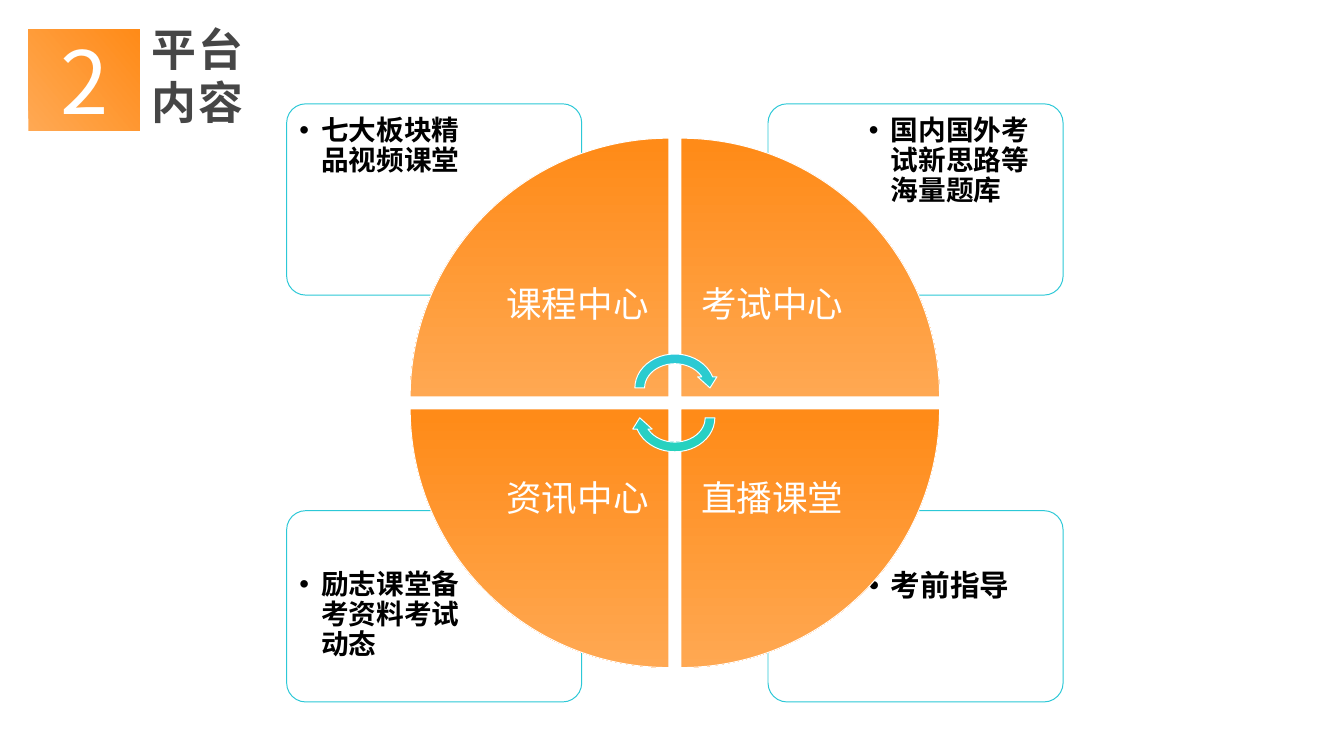
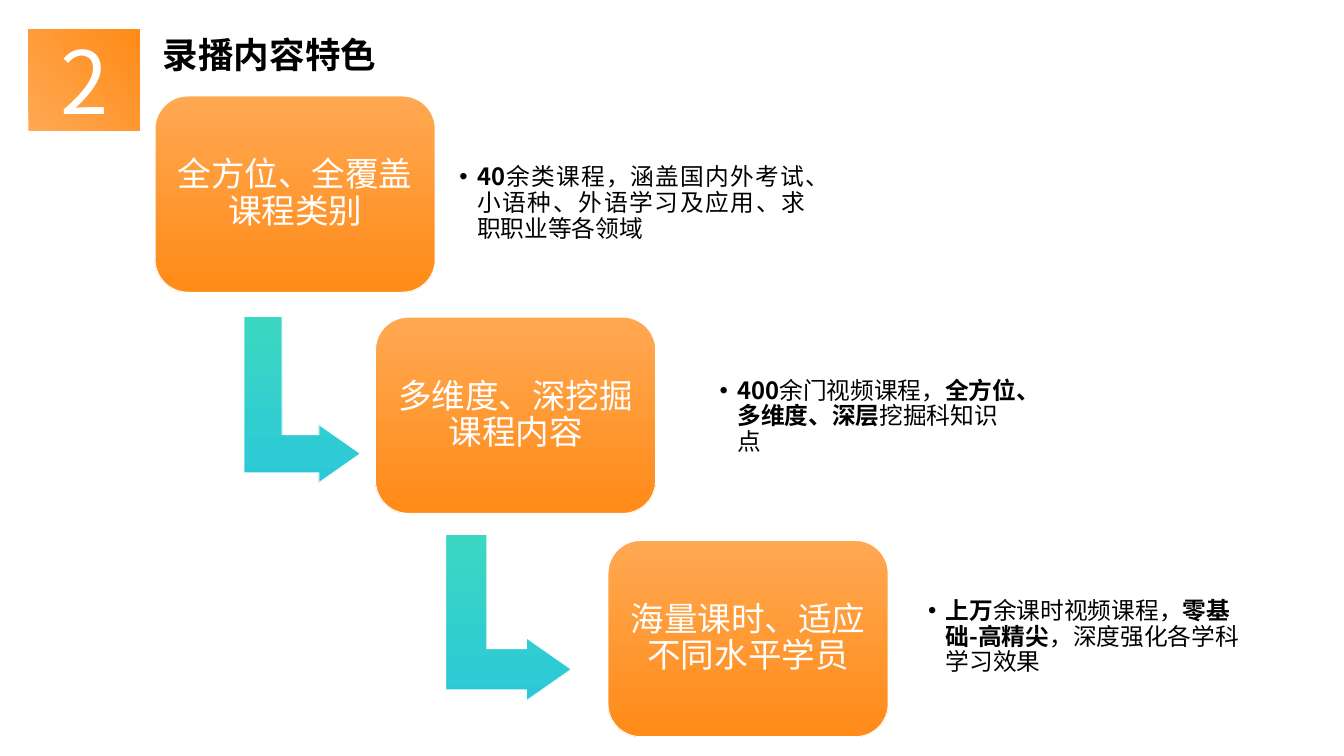
"""Build two slides on what a learning platform offers."""
from lxml.etree import SubElement
from pptx import Presentation
from pptx.dml.color import RGBColor
from pptx.enum.shapes import MSO_SHAPE as Kind
from pptx.enum.text import MSO_ANCHOR as Anchor, MSO_AUTO_SIZE as Auto, PP_ALIGN as Align
from pptx.oxml.ns import qn
from pptx.util import Pt

FACE = "Noto Sans CJK SC"
WHITE, BLACK, GREY, TEAL = "FFFFFF", "000000", "464646", "2CC8D7"
DARK, LIGHT, MINT, GREEN = "FF8B18", "FFA852", "3CD7C2", "26D3BC"
hue = RGBColor.from_string


def draw(slide, kind, box, stops, line=WHITE, turn=0, angle=270, start=0):
    """Add a shape with a gradient that keeps its direction when turned."""
    shape = slide.shapes.add_shape(kind, *map(Pt, box))
    shape.shadow.inherit = False
    shape.rotation = turn
    shape.fill.gradient()
    shape.fill.gradient_angle = angle
    for stop, color, spot in zip(shape.fill.gradient_stops, stops, (start, 1)):
        stop.color.rgb = hue(color)
        stop.position = spot
    shape.element.spPr.find(qn("a:gradFill")).set("rotWithShape", "0")
    if line:
        shape.line.color.rgb = hue(line)
        shape.line.width = Pt(1)
    else:
        shape.line.fill.background()
    return shape


def write(shape, runs, size, color, pads, align=Align.CENTER, anchor=Anchor.MIDDLE,
          lead=0.9, hang=0, track=0):
    """Fill a shape with one paragraph of (text, bold) runs."""
    frame = shape.text_frame
    frame.word_wrap = True
    frame.auto_size = Auto.NONE
    frame.vertical_anchor = anchor
    frame.margin_left = frame.margin_right = Pt(pads[0])
    frame.margin_top = frame.margin_bottom = Pt(pads[1])
    para = frame.paragraphs[0]
    para.alignment = align
    para.line_spacing = lead
    para.space_before = Pt(0)
    if hang:
        para.level = 1
        props = para._p.get_or_add_pPr()
        props.set("marL", str(Pt(hang)))
        props.set("indent", str(Pt(-hang)))
        SubElement(props, qn("a:buFont"), typeface="Arial")
        SubElement(props, qn("a:buChar"), char="•")
    for text, bold in runs:
        run = para.add_run()
        run.text = text
        font = run.font
        font.size, font.bold, font.name = Pt(size), bold, FACE
        font.color.rgb = hue(color)
        mark = run._r.get_or_add_rPr()
        SubElement(mark, qn("a:ea"), typeface=FACE)
        if track:
            mark.set("spc", str(track))


deck = Presentation()
deck.slide_width, deck.slide_height = Pt(1360.8), Pt(765.4)
layout = deck.slide_layouts.get_by_name("Comparison")

heads = [
    ("平台内容", (141.8, 15.8, 150.5, 121.7), 45.4, GREY, (11.5, 5.8), 240),
    ("录播内容特色", (157.7, 29.5, 252, 51), 36, BLACK, (7.2, 3.6), 0),
]
for text, box, size, color, pads, track in heads:
    slide = deck.slides.add_slide(layout)
    title = slide.shapes.title
    title.left, title.top, title.width, title.height = map(Pt, box)
    write(title, [(text, True)], size, color, pads, Align.LEFT, Anchor.TOP, 1, track=track)
    badge = draw(slide, Kind.RECTANGLE, (28.8, 29.5, 113, 103), (LIGHT, DARK),
                 None, angle=40, start=0.02)
    write(badge, [("2", False)], 88, WHITE, (6.5, 2.9), lead=1)
wheel, steps = deck.slides

MIDX, MIDY, GAP = 683.3, 407.9, 6
WEDGE, LABEL, CARDW, CARDH = 262, 185, 298.8, 193.7
parts = [
    (0, 0, 0, "课程中心", "七大板块精品视频课堂", 28),
    (1, 0, 90, "考试中心", "国内国外考试新思路等海量题库", 28),
    (1, 1, 180, "直播课堂", "考前指导", 30),
    (0, 1, 270, "资讯中心", "励志课堂备考资料考试动态", 28),
]
for spot, (col, row, turn, name, note, size) in enumerate(parts, 1):
    left, top = (290.2, 777.6)[col], (105.1, 517)[row]
    card = draw(wheel, Kind.ROUNDED_RECTANGLE, (left, top, CARDW, CARDH), (WHITE, WHITE), TEAL)
    card.adjustments[0] = 0.1
    card.fill.solid()
    card.fill.fore_color.rgb = hue(WHITE)
    SubElement(card.element.spPr.find(".//" + qn("a:srgbClr")), qn("a:alpha"), val="90000")
    wheel.shapes.element.insert(2, card.element)

    body = wheel.placeholders[spot]
    box = (left + (4.3, 93.6)[col], top + (4.3, 52.5)[row], 200.9, 136.8)
    body.left, body.top, body.width, body.height = map(Pt, box)
    write(body, [(note, True)], size, BLACK, (8.6, 8.6), Align.LEFT, Anchor.TOP, hang=22.3)

    near = [(mid + GAP if side else mid - GAP - WEDGE) for mid, side in ((MIDX, col), (MIDY, row))]
    draw(wheel, Kind.PIE_WEDGE, (*near, WEDGE, WEDGE), (DARK, LIGHT), turn=turn, start=0.02)
    near = [(mid + GAP if side else mid - GAP - LABEL) for mid, side in ((MIDX, col), (MIDY, row))]
    label = wheel.shapes.add_textbox(*map(Pt, (*near, LABEL, LABEL)))
    write(label, [(name, False)], 36, WHITE, (20, 20))

for turn, shift in ((0, -15.1), (180, 15.1)):
    box = (MIDX - 45.4, MIDY + shift - 39.3, 90.8, 78.6)
    draw(wheel, Kind.CIRCULAR_ARROW, box, (TEAL, GREEN), turn=turn, start=0.02)

stages = [
    ((157, 97.2), "全方位、全覆盖课程类别", (457.9, 126, 365), Align.JUSTIFY,
     [("40", True), ("余类课程，涵盖国内外考试、小语种、外语学习及应用、求职职业等各领域", False)]),
    ((380.2, 321.1), "多维度、深挖掘课程内容", (721.4, 342, 319.7), Align.LEFT,
     [("400", True), ("余门视频课程，", False), ("全方位、多维度、深层", True), ("挖掘科知识点", False)]),
    ((615.6, 547.2), "海量课时、适应不同水平学员", (932.4, 565.2, 352.8), Align.LEFT,
     [("上万", True), ("余课时视频课程，", False), ("零基础-高精尖", True),
      ("，深度强化各学科学习效果", False)]),
]
for spot, (place, name, area, align, runs) in enumerate(stages, 1):
    card = draw(steps, Kind.ROUNDED_RECTANGLE, (*place, 283.7, 198.7), (LIGHT, DARK))
    card.adjustments[0] = 0.167
    write(card, [(name, False)], 34, WHITE, (10, 10))
    body = steps.placeholders[spot]
    body.left, body.top, body.width, body.height = map(Pt, (*area, 160.6))
    write(body, runs, 24, BLACK, (7.2, 7.2), align, hang=18)
spare = steps.placeholders[4].element
spare.getparent().remove(spare)

for box in ((221.8, 345.6, 168.5, 118), (430.6, 561.6, 168.5, 127.4)):
    arrow = draw(steps, Kind.BENT_UP_ARROW, box, (MINT, TEAL), turn=90)
    for spot, ratio in enumerate((0.328, 0.25, 0.358)):
        arrow.adjustments[spot] = ratio

deck.save("out.pptx")
